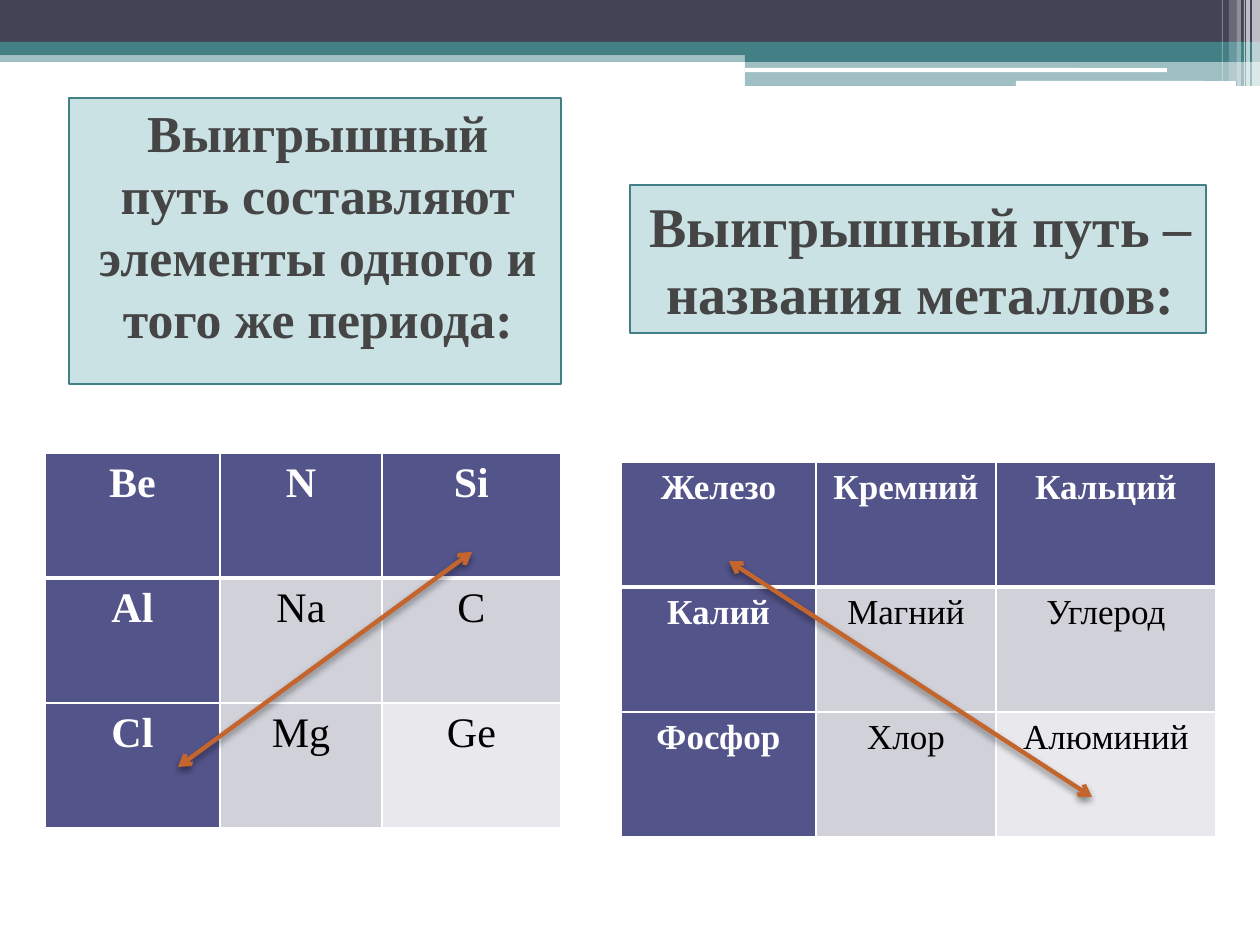
from lxml.etree import SubElement
from pptx import Presentation
from pptx.dml.color import RGBColor
from pptx.enum.shapes import MSO_CONNECTOR, MSO_SHAPE
from pptx.enum.text import MSO_ANCHOR, PP_ALIGN
from pptx.oxml.ns import qn
from pptx.util import Pt

EMU_PER_PX = 914400 / 126
FONT = "Times New Roman"
WHITE = RGBColor(0xFF, 0xFF, 0xFF)
BLACK = RGBColor(0x00, 0x00, 0x00)
NAVY = RGBColor(0x42, 0x44, 0x56)
TEAL = RGBColor(0x43, 0x80, 0x86)
AQUA = RGBColor(0x32, 0x8E, 0x97)
GRAPHITE = RGBColor(0x45, 0x45, 0x45)
INDIGO = RGBColor(0x53, 0x54, 0x8A)
LILAC = RGBColor(0xD1, 0xD1, 0xDA)
PALE_LILAC = RGBColor(0xE9, 0xE9, 0xED)
ORANGE = RGBColor(0xC4, 0x65, 0x2D)

BANDS = [
    (0, 50, 1260, 12, TEAL, 50),
    (0, 0, 1260, 43, NAVY, 100),
    (0, 42, 1260, 13, TEAL, 100),
    (745, 49, 515, 13, TEAL, 100),
    (745, 61, 515, 25, TEAL, 50),
]
WHITE_BARS = [(745, 68, 422, 4), (1016, 81, 220, 5)]
STRIPES = [
    (1252, 8, 86, 65),
    (1246, 4, 86, 65),
    (1244, 1, 86, 60),
    (1237, 4, 86, 40),
    (1229, 8, 81, 20),
    (1222, 1, 81, 30),
]
PERIOD_ELEMENTS = [["Be", "N", "Si"], ["Al", "Na", "C"], ["Cl", "Mg", "Ge"]]
METAL_NAMES = [
    ["Железо", "Кремний", "Кальций"],
    ["Калий", "Магний", "Углерод"],
    ["Фосфор", "Хлор", "Алюминий"],
]


def px(length):
    return round(length * EMU_PER_PX)


def paint(shape, color, opacity=100):
    shape.fill.solid()
    shape.fill.fore_color.rgb = color
    if opacity < 100:
        tint = shape.fill._xPr.find(qn("a:solidFill"))[0]
        SubElement(tint, qn("a:alpha"), val=str(opacity * 1000))


def write_text(frame, text, size, color, bold=True, spacing=None, before=0, indent=0):
    paragraph = frame.paragraphs[0]
    paragraph.alignment = PP_ALIGN.CENTER
    paragraph.space_before = Pt(before)
    if spacing:
        paragraph.line_spacing = spacing
    if indent:
        properties = paragraph._p.get_or_add_pPr()
        properties.set("marL", str(px(indent)))
        properties.set("indent", "0")
    run = paragraph.add_run()
    run.text = text
    run.font.name = FONT
    run.font.size = Pt(size)
    run.font.bold = bold
    run.font.color.rgb = color


def add_block(slide, left, top, width, height, color, opacity=100, form=MSO_SHAPE.RECTANGLE):
    block = slide.shapes.add_shape(form, px(left), px(top), px(width), px(height))
    block.shadow.inherit = False
    block.line.fill.background()
    paint(block, color, opacity)


def add_banner(slide):
    for band in BANDS:
        add_block(slide, *band)
    for bar in WHITE_BARS:
        add_block(slide, *bar, WHITE, form=MSO_SHAPE.ROUNDED_RECTANGLE)
    for left, width, height, opacity in STRIPES:
        add_block(slide, left, 0, width, height, WHITE, opacity)


def place_rule(rule, box, text, size, insets=(6, 6)):
    rule.left, rule.top, rule.width, rule.height = map(px, box)
    paint(rule, AQUA, 25)
    rule.line.color.rgb = TEAL
    rule.line.width = Pt(1)
    frame = rule.text_frame
    frame.word_wrap = True
    frame.vertical_anchor = MSO_ANCHOR.MIDDLE
    frame.margin_top, frame.margin_bottom = map(px, insets)
    write_text(frame, text, size, GRAPHITE, before=3, indent=6)


def add_borders(cell, widths):
    properties = cell._tc.get_or_add_tcPr()
    for side, width in widths.items():
        border = SubElement(properties, qn(f"a:ln{side}"), w=str(Pt(width)))
        fill = SubElement(border, qn("a:solidFill"))
        SubElement(fill, qn("a:srgbClr"), val=str(WHITE))


def cell_fill(row, column):
    if row == 0 or column == 0:
        return INDIGO
    return PALE_LILAC if row == column == 2 else LILAC


def add_grid(slide, left, top, column_widths, words, size, row_height=125):
    grid = slide.shapes.add_table(
        len(words), len(column_widths), px(left), px(top),
        px(sum(column_widths)), px(row_height * len(words)),
    ).table
    for column, width in zip(grid.columns, column_widths):
        column.width = px(width)
    for r, line in enumerate(words):
        grid.rows[r].height = px(row_height)
        for c, word in enumerate(line):
            cell = grid.cell(r, c)
            cell.margin_left = cell.margin_right = px(9)
            cell.margin_top = cell.margin_bottom = 0
            add_borders(cell, {"L": 1, "R": 1, "T": 3 if r == 1 else 1, "B": 3 if r == 0 else 1})
            paint(cell, cell_fill(r, c))
            heading = r == 0 or c == 0
            write_text(cell.text_frame, word, size, WHITE if heading else BLACK,
                       bold=heading, spacing=1.15)


def add_winning_path(slide, start, end):
    path_line = slide.shapes.add_connector(MSO_CONNECTOR.STRAIGHT, *map(px, start + end))
    path_line.line.color.rgb = ORANGE
    path_line.line.width = Pt(2.5)
    outline = path_line.line._get_or_add_ln()
    for tip in ("a:headEnd", "a:tailEnd"):
        SubElement(outline, qn(tip), type="arrow")
    effects = SubElement(path_line._element.spPr, qn("a:effectLst"))
    shadow = SubElement(effects, qn("a:outerShdw"), blurRad=str(Pt(4)), dist=str(Pt(2)),
                        dir="5400000", rotWithShape="0")
    tint = SubElement(shadow, qn("a:srgbClr"), val=str(BLACK))
    SubElement(tint, qn("a:alpha"), val="45000")


def main():
    deck = Presentation()
    deck.slide_width, deck.slide_height = px(1260), px(945)
    slide = deck.slides.add_slide(deck.slide_layouts.get_by_name("Comparison"))
    rules = {1: None, 3: None}
    for holder in list(slide.placeholders):
        number = holder.placeholder_format.idx
        if number in rules:
            rules[number] = holder
        else:
            holder._element.getparent().remove(holder._element)

    add_banner(slide)
    place_rule(rules[1], (69, 98, 492, 286),
               "Выигрышный путь составляют элементы одного и того же периода:", 29.6,
               insets=(0, 32))
    place_rule(rules[3], (630, 185, 576, 148), "Выигрышный путь – названия металлов:", 32)
    add_grid(slide, 45, 453, (175, 162, 179), PERIOD_ELEMENTS, 24)
    add_grid(slide, 621, 462, (195, 180, 220), METAL_NAMES, 20)
    add_winning_path(slide, (178, 767), (472, 552))
    add_winning_path(slide, (729, 561), (1092, 797))
    deck.save("out.pptx")


if __name__ == "__main__":
    main()
